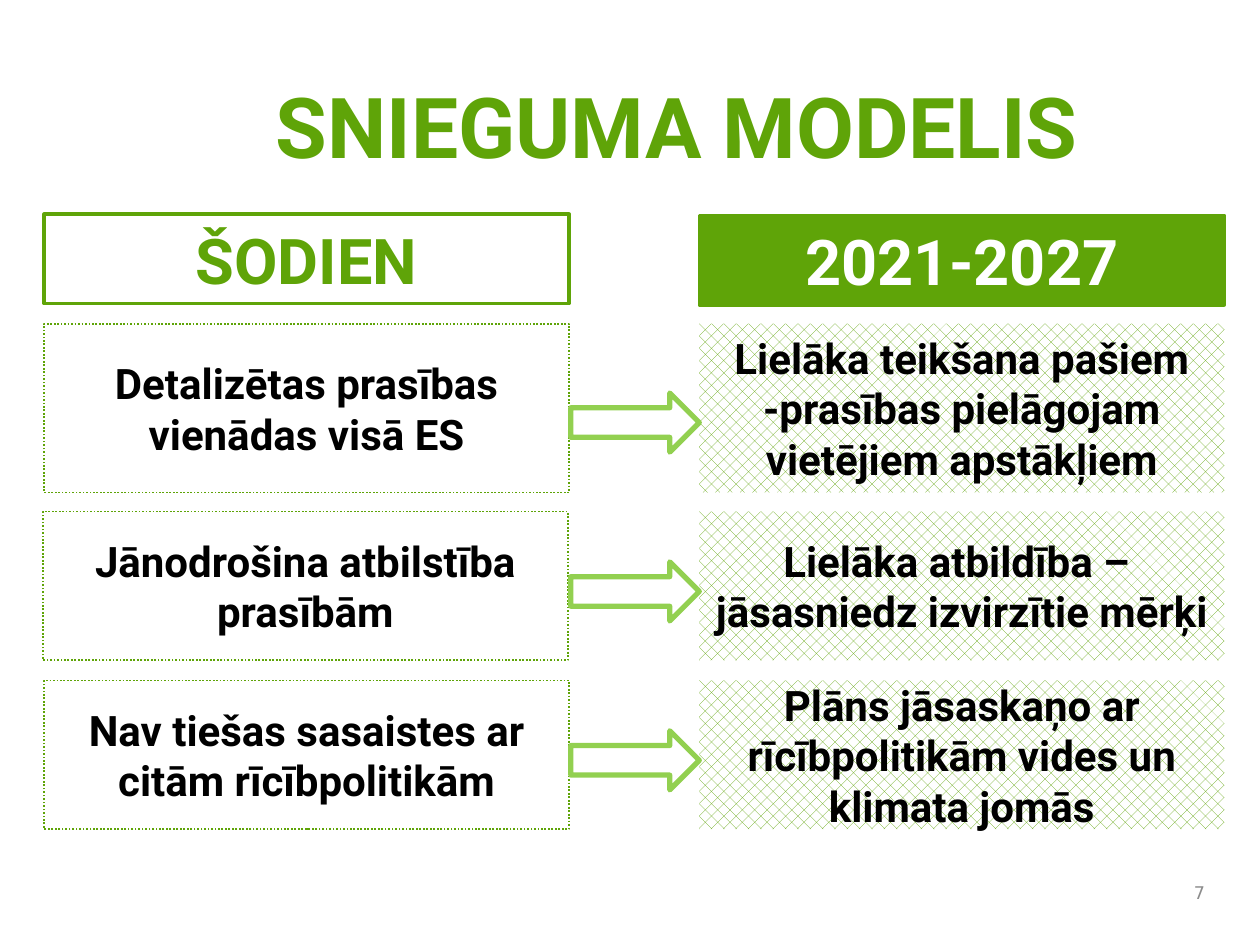
"""Build the performance model slide comparing today with 2021-2027."""
from pptx import Presentation
from pptx.dml.color import RGBColor
from pptx.enum.dml import MSO_LINE, MSO_PATTERN
from pptx.enum.shapes import MSO_SHAPE
from pptx.enum.text import MSO_ANCHOR, MSO_AUTO_SIZE, PP_ALIGN
from pptx.util import Pt

GREEN = RGBColor(0x5F, 0xA4, 0x08)
LIME = RGBColor(0x92, 0xD0, 0x50)
GREY = RGBColor(0x8C, 0x8C, 0x8C)
BLACK = RGBColor(0, 0, 0)
WHITE = RGBColor(255, 255, 255)

TODAY_X, FUTURE_X, COLUMN_W = 25.2, 399.6, 300
HEADER_H = 51.1
ARROW_X, ARROW_Y, ARROW_W, ARROW_H, ARROW_STEP = 326.2, 224.6, 73.4, 33.8, 96.5

ROWS = [
    (185, 96.5, TODAY_X, ["Detalizētas prasības vienādas visā ES"],
     ["Lielāka teikšana pašiem -prasības pielāgojam vietējiem apstākļiem"]),
    (292.3, 85, 24.5, ["Jānodrošina atbilstība prasībām"],
     ["Lielāka atbildība – ", "jāsasniedz izvirzītie mērķi"]),
    (388.8, 85, TODAY_X, ["Nav tiešas sasaistes ar citām rīcībpolitikām"],
     ["Plāns jāsaskaņo ar rīcībpolitikām vides un klimata jomās"]),
]


class Deck:
    """Hold the style and the current slide."""

    title_font = dict(name="Roboto", size=Pt(48), bold=True)
    header_font = dict(name="Roboto", size=Pt(36), bold=True)
    body_font = dict(name="Roboto", size=Pt(24), bold=True)
    number_font = dict(name="DejaVu Sans", size=Pt(10), bold=False)

    def __init__(self, prs):
        self.s = prs.slides.add_slide(prs.slide_layouts[5])

    def text(self, sp, lines, font, color, align=PP_ALIGN.CENTER):
        tf = sp.text_frame
        frame = dict(word_wrap=True, auto_size=MSO_AUTO_SIZE.NONE,
                     vertical_anchor=MSO_ANCHOR.MIDDLE)
        for key, value in frame.items():
            setattr(tf, key, value)
        for i, line in enumerate(lines):
            p = tf.add_paragraph() if i else tf.paragraphs[0]
            p.alignment = align
            r = p.add_run()
            r.text = line
            for key, value in font.items():
                setattr(r.font, key, value)
            r.font.color.rgb = color

    def title(self, text, x, y, w, h):
        sp = self.s.shapes.title
        place = dict(left=Pt(x), top=Pt(y), width=Pt(w), height=Pt(h))
        for key, value in place.items():
            setattr(sp, key, value)
        self.text(sp, [text], self.title_font, GREEN, PP_ALIGN.LEFT)

    def number(self, text, x, y, w, h):
        sp = self.s.shapes.add_textbox(Pt(x), Pt(y), Pt(w), Pt(h))
        self.text(sp, [text], self.number_font, GREY, PP_ALIGN.RIGHT)

    def shape(self, kind, x, y, w, h, line=None, width=1):
        sp = self.s.shapes.add_shape(kind, Pt(x), Pt(y), Pt(w), Pt(h))
        sp.shadow.inherit = False
        sp.fill.background()
        if line is None:
            sp.line.fill.background()
        else:
            sp.line.color.rgb = line
            sp.line.width = Pt(width)
        return sp

    def header(self, text, x, y, color, fill=None):
        sp = self.shape(MSO_SHAPE.RECTANGLE, x, y, COLUMN_W, HEADER_H, GREEN, 2)
        if fill is not None:
            sp.fill.solid()
            sp.fill.fore_color.rgb = fill
        self.text(sp, [text], self.header_font, color)

    def dotted_box(self, lines, x, y, h):
        sp = self.shape(MSO_SHAPE.RECTANGLE, x, y, COLUMN_W, h, GREEN)
        sp.line.dash_style = MSO_LINE.ROUND_DOT
        self.text(sp, lines, self.body_font, BLACK)

    def pattern_box(self, lines, x, y, h):
        sp = self.shape(MSO_SHAPE.RECTANGLE, x, y, COLUMN_W, h)
        sp.fill.patterned()
        sp.fill.pattern = MSO_PATTERN.PERCENT_30
        sp.fill.fore_color.rgb = GREEN
        sp.fill.back_color.rgb = WHITE
        self.text(sp, lines, self.body_font, BLACK)

    def arrow(self, x, y):
        self.shape(MSO_SHAPE.RIGHT_ARROW, x, y, ARROW_W, ARROW_H, LIME, 3)


def main():
    prs = Presentation()
    prs.slide_width, prs.slide_height = Pt(720), Pt(540)
    deck = Deck(prs)
    deck.title("SNIEGUMA MODELIS", 150.5, 31.7, 482.4, 79.2)
    deck.header("ŠODIEN", TODAY_X, 122.4, GREEN)
    deck.header("2021-2027", FUTURE_X, 123.1, WHITE, GREEN)
    for y, h, today_x, today, future in ROWS:
        deck.dotted_box(today, today_x, y, h)
        deck.pattern_box(future, FUTURE_X, y, h)
    for i in range(len(ROWS)):
        deck.arrow(ARROW_X, ARROW_Y + i * ARROW_STEP)
    deck.number("7", 671.8, 498.2, 23.8, 23.8)
    prs.save("out.pptx")


if __name__ == "__main__":
    main()
